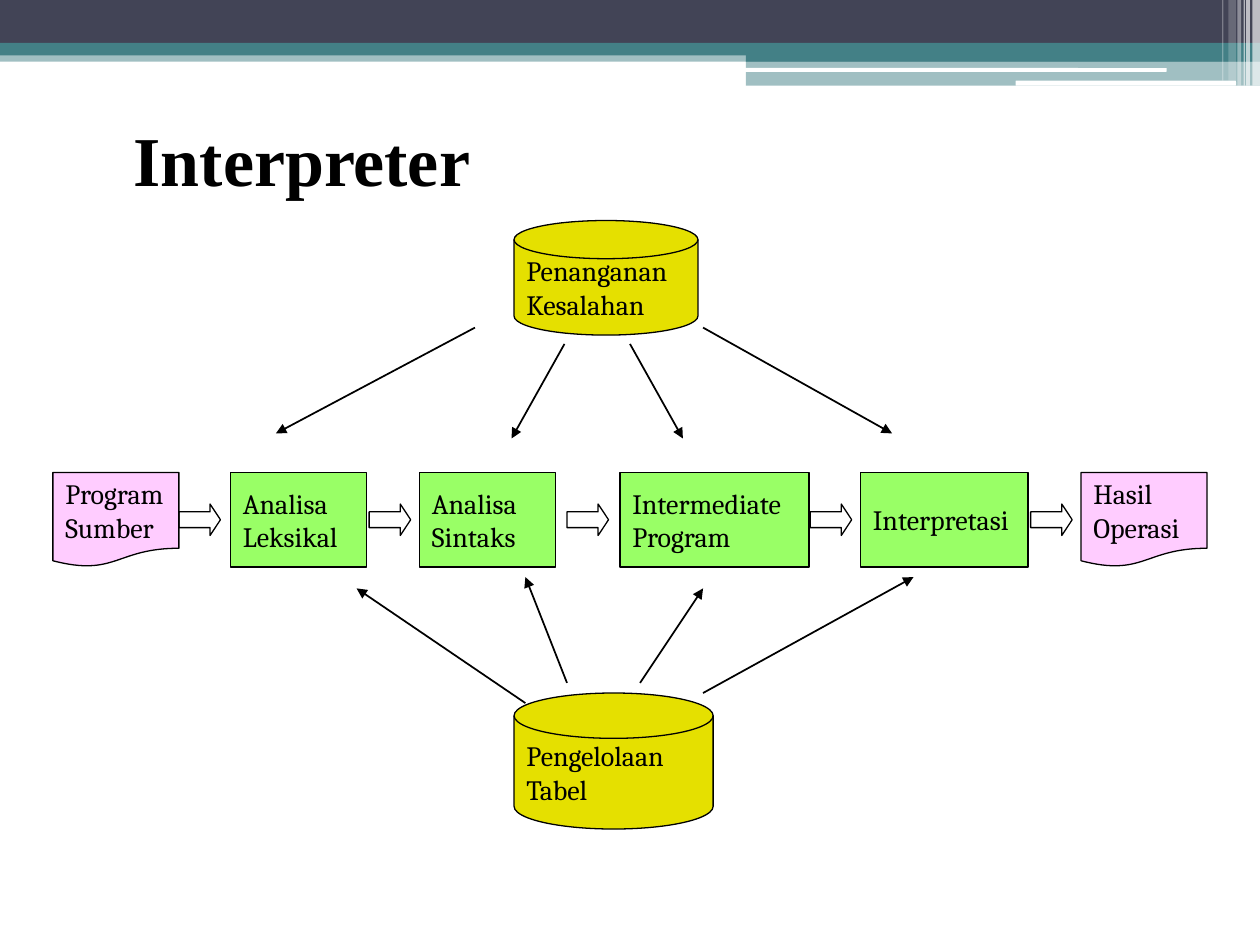
from lxml import etree
from pptx import Presentation
from pptx.dml.color import RGBColor
from pptx.enum.shapes import MSO_CONNECTOR, MSO_SHAPE as Kind
from pptx.enum.text import MSO_ANCHOR as Anchor, PP_ALIGN as Align
from pptx.oxml.ns import qn
from pptx.util import Inches, Pt

BLACK = RGBColor(0, 0, 0)
WHITE = RGBColor(255, 255, 255)
NAVY = RGBColor(0x42, 0x44, 0x56)
TEAL = RGBColor(0x43, 0x80, 0x86)
GREEN = RGBColor(0x99, 0xFF, 0x66)
PINK = RGBColor(0xFF, 0xCC, 0xFF)
YELLOW = RGBColor(0xE5, 0xE0, 0x00)

# Header bands: kind, place, colour, opacity in percent
BANDS = [
    (Kind.RECTANGLE, (0, 0.4, 10, 0.09), TEAL, 50),
    (Kind.RECTANGLE, (0, 0, 10, 0.34), NAVY, 100),
    (Kind.RECTANGLE, (0, 0.34, 10, 0.1), TEAL, 100),
    (Kind.RECTANGLE, (5.92, 0.39, 4.08, 0.1), TEAL, 100),
    (Kind.RECTANGLE, (5.92, 0.48, 4.08, 0.2), TEAL, 50),
    (Kind.ROUNDED_RECTANGLE, (5.91, 0.54, 3.35, 0.03), WHITE, 100),
    (Kind.ROUNDED_RECTANGLE, (8.06, 0.64, 1.75, 0.04), WHITE, 100),
]
# Thin upright stripes: left, width, height, opacity
STRIPES = [
    (9.94, 0.06, 0.68, 65), (9.89, 0.03, 0.68, 65), (9.87, 0.01, 0.68, 60),
    (9.82, 0.03, 0.68, 40), (9.75, 0.06, 0.64, 20), (9.7, 0.01, 0.64, 30),
]
# Steps in the middle row: text, left, width
STEPS = [
    ("Analisa\nLeksikal", 1.83, 1.08),
    ("Analisa\nSintaks", 3.33, 1.08),
    ("Intermediate\nProgram", 4.92, 1.5),
    ("Interpretasi", 6.83, 1.33),
]
FILES = [("Program\nSumber", 0.42), ("Hasil\nOperasi", 8.58)]
STORES = [
    ("Pengelolaan\nTabel", (4.08, 5.5, 1.58, 1.08)),
    ("Penanganan\nKesalahan", (4.08, 1.75, 1.46, 0.91)),
]
ARROWS = [1.42, 2.93, 4.5, 6.43, 8.18]
# Links between stores and steps: start, end (arrowhead)
LINKS = [
    ((4.17, 5.58), (2.83, 4.67)), ((4.5, 5.42), (4.17, 4.58)),
    ((5.08, 5.42), (5.58, 4.67)), ((5.58, 5.5), (7.25, 4.58)),
    ((3.77, 2.6), (2.19, 3.44)), ((4.48, 2.73), (4.06, 3.48)),
    ((5, 2.73), (5.42, 3.48)), ((5.58, 2.6), (7.08, 3.44)),
]
ROW, TALL = 3.75, 0.75
BODY = {"name": "Cambria", "size": Pt(16)}
HEAD = {"name": "Times New Roman", "size": Pt(40), "bold": True}

deck = Presentation()
deck.slide_width, deck.slide_height = Inches(10), Inches(7.5)
slide = deck.slides.add_slide(deck.slide_layouts[6])
shapes = slide.shapes


def add_part(kind, place, fill=None, line=None):
    part = shapes.add_shape(kind, *map(Inches, place))
    part.shadow.inherit = False
    if fill is None:
        part.fill.background()
    else:
        part.fill.solid()
        part.fill.fore_color.rgb = fill
    if line is None:
        part.line.fill.background()
    else:
        part.line.color.rgb = BLACK
        part.line.width = Pt(line)
    return part


def add_band(kind, place, fill, alpha):
    band = add_part(kind, place, fill)
    if alpha < 100:
        color = band.fill._xPr.find(qn("a:solidFill"))[0]
        etree.SubElement(color, qn("a:alpha"), val=str(alpha * 1000))


def set_text(part, text, style, align, anchor, wrap):
    frame = part.text_frame
    frame.text = text
    frame.word_wrap = wrap
    frame.vertical_anchor = anchor
    for para in frame.paragraphs:
        para.alignment = align
        para.font.color.rgb = BLACK
        for key, value in style.items():
            setattr(para.font, key, value)


def add_node(kind, text, place, fill, line):
    node = add_part(kind, place, fill, line)
    set_text(node, text, BODY, Align.LEFT, Anchor.MIDDLE, False)


# Header
for band in BANDS:
    add_band(*band)
for left, width, height, alpha in STRIPES:
    add_band(Kind.RECTANGLE, (left, 0, width, height), WHITE, alpha)

# Title
title = shapes.add_textbox(*map(Inches, (0.31, 0.7, 3.52, 0.94)))
set_text(title, "Interpreter", HEAD, Align.RIGHT, Anchor.BOTTOM, True)

# Steps, files and stores
for text, left, width in STEPS:
    add_node(Kind.RECTANGLE, text, (left, ROW, width, TALL), GREEN, 1)
for text, left in FILES:
    add_node(Kind.FLOWCHART_DOCUMENT, text, (left, ROW, 1, TALL), PINK, 0.75)
for text, place in STORES:
    add_node(Kind.FLOWCHART_MAGNETIC_DISK, text, place, YELLOW, 0.75)

# Block arrows along the row
for left in ARROWS:
    arrow = add_part(Kind.RIGHT_ARROW, (left, 4, 0.33, 0.25), line=0.75)
    arrow.adjustments[1] = 0.33

# Links
for start, end in LINKS:
    link = shapes.add_connector(MSO_CONNECTOR.STRAIGHT, *map(Inches, start + end))
    link.line.color.rgb = BLACK
    link.line.width = Pt(1)
    etree.SubElement(link.line._get_or_add_ln(), qn("a:tailEnd"), type="triangle")
    etree.SubElement(link._element.spPr, qn("a:effectLst"))

deck.save("out.pptx")
